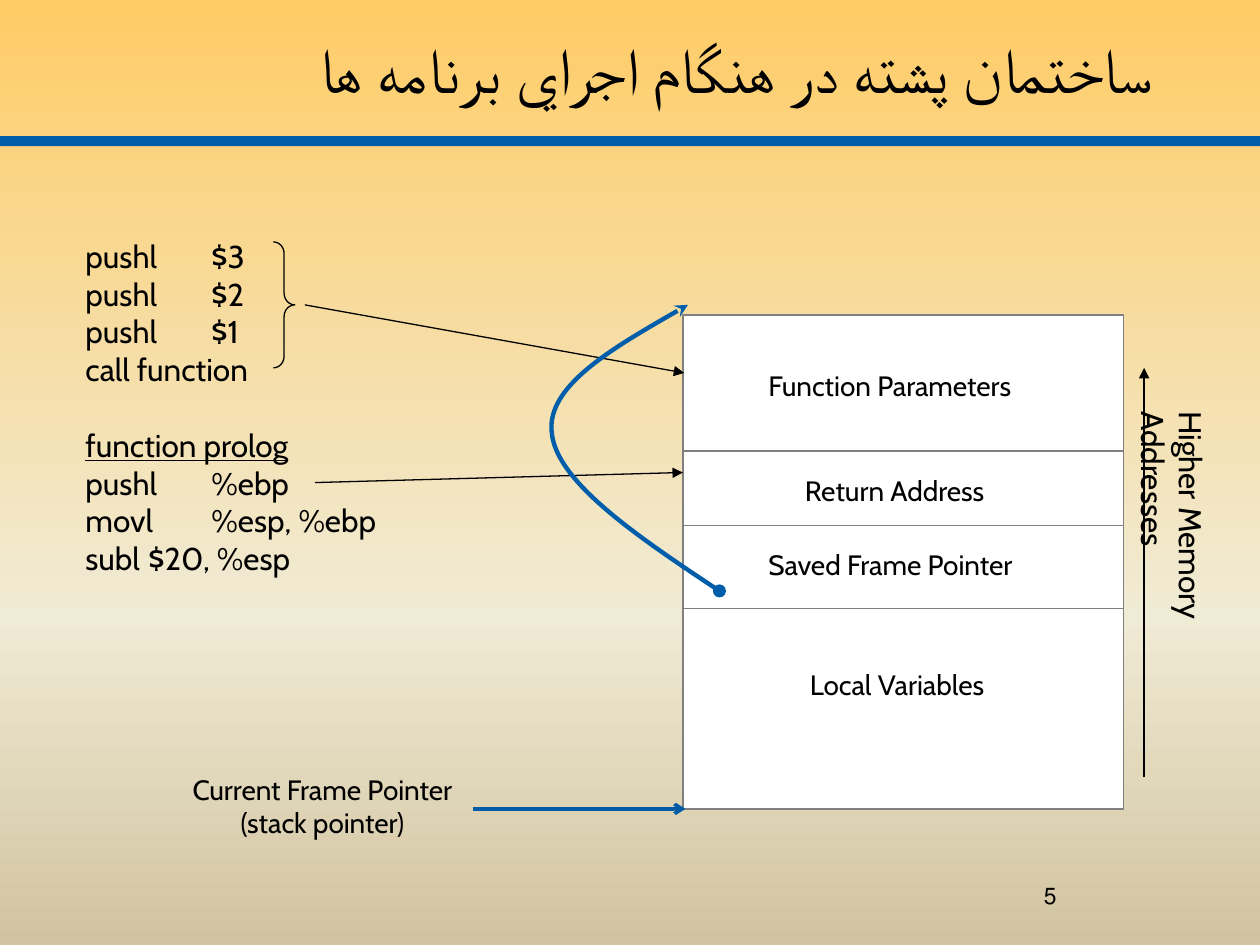
from copy import deepcopy
from dataclasses import dataclass

from lxml import etree
from pptx import Presentation
from pptx.dml.color import RGBColor
from pptx.enum.shapes import MSO_CONNECTOR, MSO_SHAPE
from pptx.enum.text import MSO_ANCHOR, PP_ALIGN
from pptx.oxml.ns import qn
from pptx.util import Inches, Pt

STRAIGHT = MSO_CONNECTOR.STRAIGHT
RECTANGLE, BRACE = MSO_SHAPE.RECTANGLE, MSO_SHAPE.RIGHT_BRACE
LEFT, CENTER, RIGHT = PP_ALIGN.LEFT, PP_ALIGN.CENTER, PP_ALIGN.RIGHT
MIDDLE = MSO_ANCHOR.MIDDLE


@dataclass(frozen=True)
class Theme:
    ink: str = "000000"
    paper: str = "FFFFFF"
    rule: str = "808080"
    blue: str = "005DAA"
    pointer: str = "005BA6"
    backdrop: tuple = ((0, "FFCC66"), (0.65, "F0EBD5"), (1, "D1C39F"))
    font: str = "Cabin"
    number_font: str = "Arial"
    title: int = 36
    code: int = 18
    label: int = 16
    number: int = 13


theme = Theme()


def write(frame, text, size=theme.label, font=theme.font, align=LEFT,
          rtl=False, underline=False, before=0):
    for line in text.split("\n"):
        para = frame.paragraphs[-1]
        if para.runs:
            para = frame.add_paragraph()
        para.alignment = align
        para.space_before = Pt(before)
        if rtl:
            para._p.get_or_add_pPr().set("rtl", "1")
        span = para.add_run()
        span.text = line
        span.font.size = Pt(size)
        span.font.name = font
        span.font.underline = underline
        span.font.color.rgb = RGBColor.from_string(theme.ink)


def stroke(item, color, width, head=None, tail=None):
    item.line.color.rgb = RGBColor.from_string(color)
    item.line.width = Pt(width)
    properties = item._element.spPr
    outline = properties.find(qn("a:ln"))
    for tag, kind in (("a:headEnd", head), ("a:tailEnd", tail)):
        if kind:
            etree.SubElement(outline, qn(tag)).set("type", kind)
    if properties.find(qn("a:effectLst")) is None:
        etree.SubElement(properties, qn("a:effectLst"))


deck = Presentation()
deck.slide_width, deck.slide_height = Inches(10), Inches(7.5)
page = deck.slides.add_slide(deck.slide_layouts[5])
shapes = page.shapes

backdrop = page.background.fill
backdrop.gradient()
backdrop.gradient_angle = 270
first_stop = page.background._cSld.find(".//" + qn("a:gs"))
first_stop.addnext(deepcopy(first_stop))
for stop, (position, color) in zip(backdrop.gradient_stops, theme.backdrop):
    stop.position = position
    stop.color.rgb = RGBColor.from_string(color)

band = shapes.add_shape(RECTANGLE, 0, Inches(1.08), Inches(10), Inches(0.08))
band.shadow.inherit = False
band.fill.solid()
band.fill.fore_color.rgb = RGBColor.from_string(theme.blue)
band.line.fill.background()

title = shapes.title
title.left, title.top = Inches(0.25), Inches(0.08)
title.width, title.height = Inches(9), Inches(0.92)
title.text_frame.vertical_anchor = MIDDLE
write(title.text_frame, "ساختمان پشته در هنگام اجراي برنامه ها",
      size=theme.title, align=RIGHT, rtl=True)

stack_left, stack_right = 5.42, 8.92
stack = shapes.add_shape(RECTANGLE, Inches(stack_left), Inches(2.5),
                         Inches(stack_right - stack_left), Inches(3.92))
stack.shadow.inherit = False
stack.fill.solid()
stack.fill.fore_color.rgb = RGBColor.from_string(theme.paper)
stroke(stack, theme.rule, 0.75)

for y in (3.58, 4.17, 4.83):
    divider = shapes.add_connector(STRAIGHT, Inches(stack_left), Inches(y),
                                   Inches(stack_right), Inches(y))
    stroke(divider, theme.rule, 0.75)

for text, left, top, width in (
    ("Function Parameters", 6, 2.88, 2.23),
    ("Return Address", 6.29, 3.71, 1.71),
    ("Saved Frame Pointer", 6, 4.3, 2.24),
    ("Local Variables", 6.33, 5.25, 1.66),
):
    box = shapes.add_textbox(Inches(left), Inches(top), Inches(width), Inches(0.37))
    box.fill.solid()
    box.fill.fore_color.rgb = RGBColor.from_string(theme.paper)
    write(box.text_frame, text)

memory = shapes.add_textbox(Inches(8), Inches(4.42), Inches(2.91), Inches(0.4))
memory.rotation = 90
memory.text_frame.word_wrap = True
write(memory.text_frame, "Higher Memory Addresses", size=theme.code)

code = shapes.add_textbox(Inches(0.58), Inches(1.83), Inches(2.99), Inches(2.83))
code.text_frame.word_wrap = True
write(code.text_frame, "pushl\t$3\npushl\t$2\npushl\t$1\ncall function", size=theme.code)
write(code.text_frame, "function prolog", size=theme.code, underline=True, before=21.6)
write(code.text_frame, "pushl\t%ebp\nmovl\t%esp, %ebp\nsubl\t$20, %esp", size=theme.code)

brace = shapes.add_shape(BRACE, Inches(2.17), Inches(1.92), Inches(0.17), Inches(1))
brace.adjustments[0] = 0.54
brace.fill.background()
stroke(brace, theme.ink, 0.75)

for x1, y1, x2, y2, color, width, tail in (
    (9.08, 6.17, 9.08, 2.92, theme.ink, 0.75, "triangle"),
    (2.42, 2.42, 5.43, 2.96, theme.ink, 0.75, "triangle"),
    (2.5, 3.83, 5.42, 3.75, theme.ink, 0.75, "triangle"),
    (3.75, 6.42, 5.44, 6.42, theme.pointer, 2, "arrow"),
):
    arrow = shapes.add_connector(STRAIGHT, Inches(x1), Inches(y1), Inches(x2), Inches(y2))
    stroke(arrow, color, width, tail=tail)

curve_points = [(5.06, 4.26), (4.42, 3.82), (4.38, 3.44),
                (4.33, 3.07), (4.9, 2.74), (5.46, 2.42)]
builder = shapes.build_freeform(Inches(5.71), Inches(4.69))
builder.add_line_segments([(Inches(x), Inches(y)) for x, y in curve_points], close=False)
curve = builder.convert_to_shape()
curve.shadow.inherit = False
curve.fill.background()
outline_route = curve._element.spPr.find(".//" + qn("a:path"))
segments = outline_route.findall(qn("a:lnTo"))
for start in range(0, len(segments), 3):
    bezier = etree.SubElement(outline_route, qn("a:cubicBezTo"))
    for segment in segments[start:start + 3]:
        bezier.append(segment[0])
        outline_route.remove(segment)
stroke(curve, theme.blue, 2.5, head="oval", tail="stealth")

pointer = shapes.add_textbox(Inches(1.33), Inches(6.08), Inches(2.46), Inches(0.64))
write(pointer.text_frame, "Current Frame Pointer\n(stack pointer)", align=CENTER)

number = shapes.add_textbox(Inches(7.17), Inches(6.95), Inches(2.33), Inches(0.4))
number.text_frame.word_wrap = True
write(number.text_frame, "5", size=theme.number, font=theme.number_font,
      align=CENTER, rtl=True)

deck.save("out.pptx")
